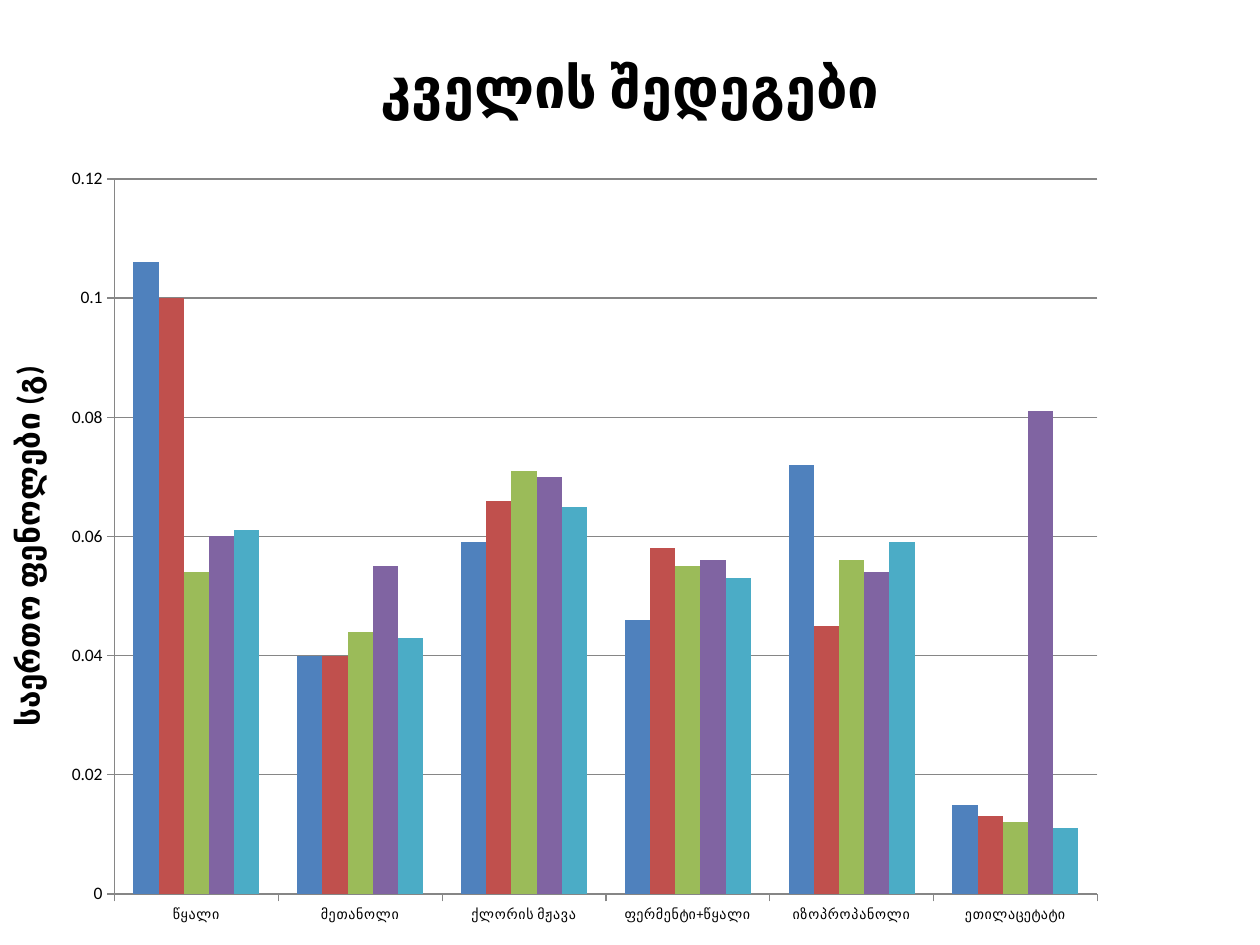
from lxml.etree import SubElement
from pptx import Presentation
from pptx.chart.data import CategoryChartData
from pptx.dml.color import RGBColor
from pptx.enum.chart import XL_CHART_TYPE as ChartType, XL_TICK_MARK as TickMark
from pptx.enum.text import MSO_ANCHOR as Anchor, PP_ALIGN as Align
from pptx.oxml.ns import qn
from pptx.util import Inches, Pt

FONT = "Calibri"
BLACK = RGBColor(0x00, 0x00, 0x00)
GRAY = RGBColor(0x86, 0x86, 0x86)
SERIES_COLORS = [
    RGBColor(0x4F, 0x81, 0xBD),
    RGBColor(0xC0, 0x50, 0x4D),
    RGBColor(0x9B, 0xBB, 0x59),
    RGBColor(0x80, 0x64, 0xA2),
    RGBColor(0x4B, 0xAC, 0xC6),
]

SOLVENTS = ["წყალი", "მეთანოლი", "ქლორის მჟავა",
            "ფერმენტი+წყალი", "იზოპროპანოლი", "ეთილაცეტატი"]
PHENOLS = [
    (0.106, 0.04, 0.059, 0.046, 0.072, 0.015),
    (0.1, 0.04, 0.066, 0.058, 0.045, 0.013),
    (0.054, 0.044, 0.071, 0.055, 0.056, 0.012),
    (0.06, 0.055, 0.07, 0.056, 0.054, 0.081),
    (0.061, 0.043, 0.065, 0.053, 0.059, 0.011),
]
# Inner plot area, in percent of the chart
PLOT_AREA = {"x": 9.1, "y": 1.5, "w": 78, "h": 94.6}


def format_font(font, size, bold=False, color=BLACK):
    font.name = FONT
    font.size = Pt(size)
    font.bold = bold
    font.color.rgb = color


def write_text(frame, text, *, size, bold=False, align=Align.CENTER):
    para = frame.paragraphs[0]
    para.alignment = align
    span = para.add_run()
    span.text = text
    format_font(span.font, size, bold)


def set_plot_area(chart, shares):
    """Fix the inner plot area, which has no public setting."""
    area = chart.plots[0]._element.getparent()
    layout = area.find(qn("c:layout"))
    if layout is None:
        layout = SubElement(area, qn("c:layout"))
        area.insert(0, layout)
    manual = SubElement(layout, qn("c:manualLayout"))
    settings = [("layoutTarget", "inner"), ("xMode", "edge"), ("yMode", "edge")]
    settings += [(name, str(share / 100)) for name, share in shares.items()]
    for name, value in settings:
        SubElement(manual, qn(f"c:{name}")).set("val", value)


def format_axis(axis, size):
    axis.major_tick_mark = TickMark.OUTSIDE
    axis.minor_tick_mark = TickMark.NONE
    axis.format.line.color.rgb = GRAY
    format_font(axis.tick_labels.font, size)


def place_title(page, box):
    title = page.shapes.title
    title.left, title.top, title.width, title.height = box
    title.text_frame.vertical_anchor = Anchor.MIDDLE
    write_text(title.text_frame, "კველის შედეგები", size=32, bold=True)


def place_chart(page, box):
    data = CategoryChartData()
    data.categories = SOLVENTS
    for number, values in enumerate(PHENOLS, start=1):
        data.add_series(f"Series {number}", values)
    chart = page.shapes.add_chart(ChartType.COLUMN_CLUSTERED, *box, data).chart
    chart.has_legend = False
    chart.has_title = False
    format_font(chart.font, 10)
    set_plot_area(chart, PLOT_AREA)

    # Columns
    plot = chart.plots[0]
    plot.vary_by_categories = False
    plot.gap_width = 150
    plot.overlap = 0
    for series, color in zip(plot.series, SERIES_COLORS):
        series.format.fill.solid()
        series.format.fill.fore_color.rgb = color

    # Axes
    format_axis(chart.category_axis, 8)
    axis = chart.value_axis
    format_axis(axis, 10)
    axis.minimum_scale, axis.maximum_scale, axis.major_unit = 0, 0.12, 0.02
    axis.tick_labels.number_format = "General"
    axis.tick_labels.number_format_is_linked = False
    axis.has_major_gridlines = True
    axis.major_gridlines.format.line.color.rgb = GRAY
    write_text(axis.axis_title.text_frame, "საერთო ფენოლები (გ)", size=18, bold=True)


def main():
    deck = Presentation()
    deck.slide_width, deck.slide_height = Inches(10), Inches(7.5)
    page = deck.slides.add_slide(deck.slide_layouts[5])
    width = deck.slide_width
    place_chart(page, (0, Inches(1.33), width, int(deck.slide_height * 0.8)))
    place_title(page, (0, Inches(0.17), width, Inches(1.03)))
    deck.save("out.pptx")


if __name__ == "__main__":
    main()
